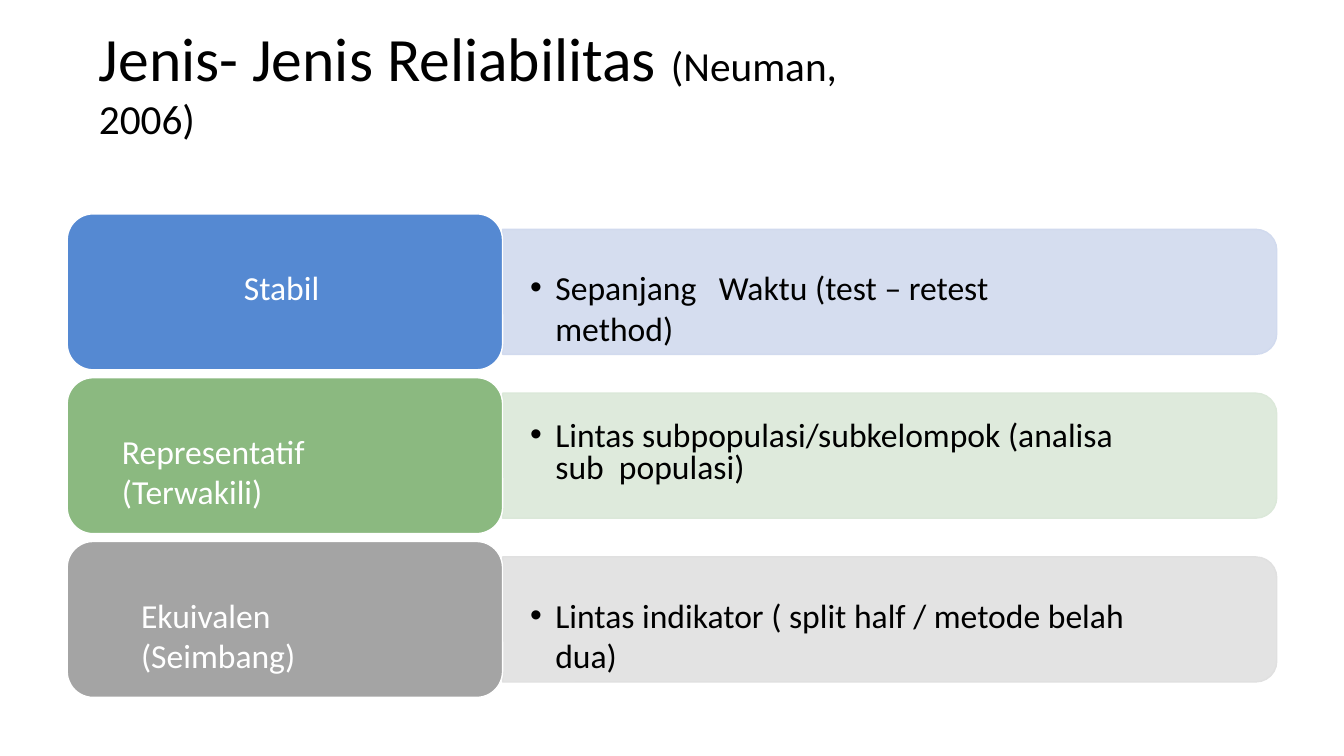
import pptx
import pptx.dml.color
import pptx.enum.shapes
import pptx.enum.text
import pptx.oxml.ns
import pptx.util
from lxml import etree

Pt = pptx.util.Pt
SHAPE = pptx.enum.shapes.MSO_SHAPE

ROW_PITCH = 117
LABEL_X, LABEL_Y, LABEL_W, LABEL_H = 48, 152.8, 311, 111.4
BAR_W, BAR_H = 553, 89.3
TEXT_Y = 189.4

# label, label text left and width, label colour, bar colour,
# description, description width, top shift, space before, line spacing
ROWS = [
    ("Stabil", 174.2, 60, "5589D2", "D1DAEE",
     "Sepanjang\tWaktu (test – retest method)", 408, 0, 1.1, None),
    ("Representatif (Terwakili)", 87.1, 228, "8BB980", "DBE8D9",
     "Lintas subpopulasi/subkelompok (analisa sub  populasi)", 447, -12, 6.4, 23.4),
    ("Ekuivalen (Seimbang)", 100.8, 200, "A4A4A4", "E0E0E0",
     "Lintas indikator ( split half / metode belah dua)", 468, 0, 1.1, None),
]


def rgb(hex_colour):
    return pptx.dml.color.RGBColor.from_string(hex_colour)


def add_run(p, text, size, colour):
    r = p.add_run()
    r.text = text
    r.font.size = Pt(size)
    r.font.name = "Calibri"
    r.font.color.rgb = rgb(colour)


def prepare_frame(tf, inset_top):
    tf.word_wrap = True
    tf.auto_size = pptx.enum.text.MSO_AUTO_SIZE.SHAPE_TO_FIT_TEXT
    tf.vertical_anchor = pptx.enum.text.MSO_ANCHOR.TOP
    tf.margin_left = tf.margin_right = tf.margin_bottom = 0
    tf.margin_top = Pt(inset_top)


def add_title(s):
    sp = s.shapes.title
    sp.left, sp.top, sp.width, sp.height = Pt(70.6), Pt(13), Pt(590), Pt(54.7)
    prepare_frame(sp.text_frame, 0.9)
    p = sp.text_frame.paragraphs[0]
    p.alignment = pptx.enum.text.PP_ALIGN.LEFT
    p.line_spacing = 1.0
    p.space_before = Pt(0.9)
    add_run(p, "Jenis- Jenis Reliabilitas ", 44, "000000")
    add_run(p, "(Neuman, 2006)", 29.5, "000000")


def add_shape(s, kind, x, y, w, h, fill, line):
    sp = s.shapes.add_shape(kind, Pt(x), Pt(y), Pt(w), Pt(h))
    sp.shadow.inherit = False
    sp.fill.solid()
    sp.fill.fore_color.rgb = rgb(fill)
    sp.line.color.rgb = rgb(line)
    sp.line.width = Pt(1)
    return sp


def add_bar(s, y, colour):
    """Bar with two rounded corners on the right: a tall shape turned by 90 degrees."""
    x = LABEL_X + LABEL_W + (BAR_W - BAR_H) / 2
    sp = add_shape(s, SHAPE.ROUND_2_SAME_RECTANGLE, x, y - (BAR_W - BAR_H) / 2,
                   BAR_H, BAR_W, colour, colour)
    sp.rotation = 90
    fill_colour = sp._element.spPr.find(pptx.oxml.ns.qn("a:solidFill"))[0]
    etree.SubElement(fill_colour, pptx.oxml.ns.qn("a:alpha"), val="90000")


def add_text(s, x, y, w, text, colour, space_before=1.1, line_spacing=None):
    sp = s.shapes.add_textbox(Pt(x), Pt(y), Pt(w), Pt(31))
    prepare_frame(sp.text_frame, 6.4 if line_spacing else 1.4)
    p = sp.text_frame.paragraphs[0]
    p.space_before = Pt(space_before)
    if line_spacing:
        p.line_spacing = Pt(line_spacing)
    add_run(p, text, 24, colour)
    return p


def add_bullet(p):
    qn = pptx.oxml.ns.qn
    pPr = p._p.get_or_add_pPr()
    pPr.set("marL", str(Pt(18.7)))
    pPr.set("indent", str(Pt(-18)))
    etree.SubElement(pPr, qn("a:buFont"), typeface="Arial")
    etree.SubElement(pPr, qn("a:buChar"), char="•")
    tabs = etree.SubElement(pPr, qn("a:tabLst"))
    for stop in (18.7, 135.4):
        etree.SubElement(tabs, qn("a:tab"), pos=str(Pt(stop)), algn="l")


def main():
    prs = pptx.Presentation()
    prs.slide_width, prs.slide_height = Pt(960), Pt(540)
    s = prs.slides.add_slide(prs.slide_layouts[5])
    add_title(s)
    for i, row in enumerate(ROWS):
        label, label_x, label_w, fill, bar_fill, text, text_w, shift, before, spacing = row
        dy = i * ROW_PITCH
        add_bar(s, LABEL_Y + (LABEL_H - BAR_H) / 2 + dy, bar_fill)
        add_bullet(add_text(s, 378, TEXT_Y + dy + shift, text_w, text, "000000",
                            before, spacing))
        add_shape(s, SHAPE.ROUNDED_RECTANGLE, LABEL_X, LABEL_Y + dy,
                  LABEL_W, LABEL_H, fill, "FFFFFF")
        add_text(s, label_x, TEXT_Y + dy, label_w, label, "FFFFFF")
    prs.save("out.pptx")


if __name__ == "__main__":
    main()
